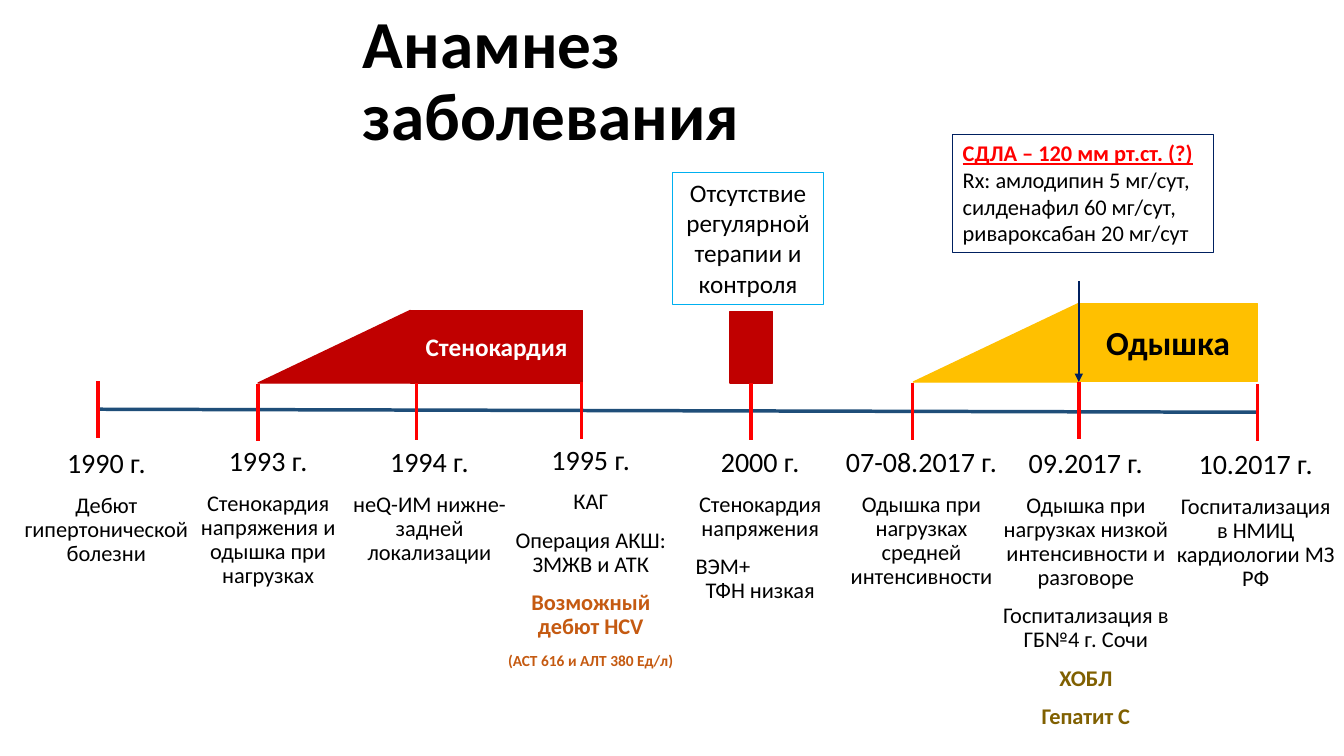
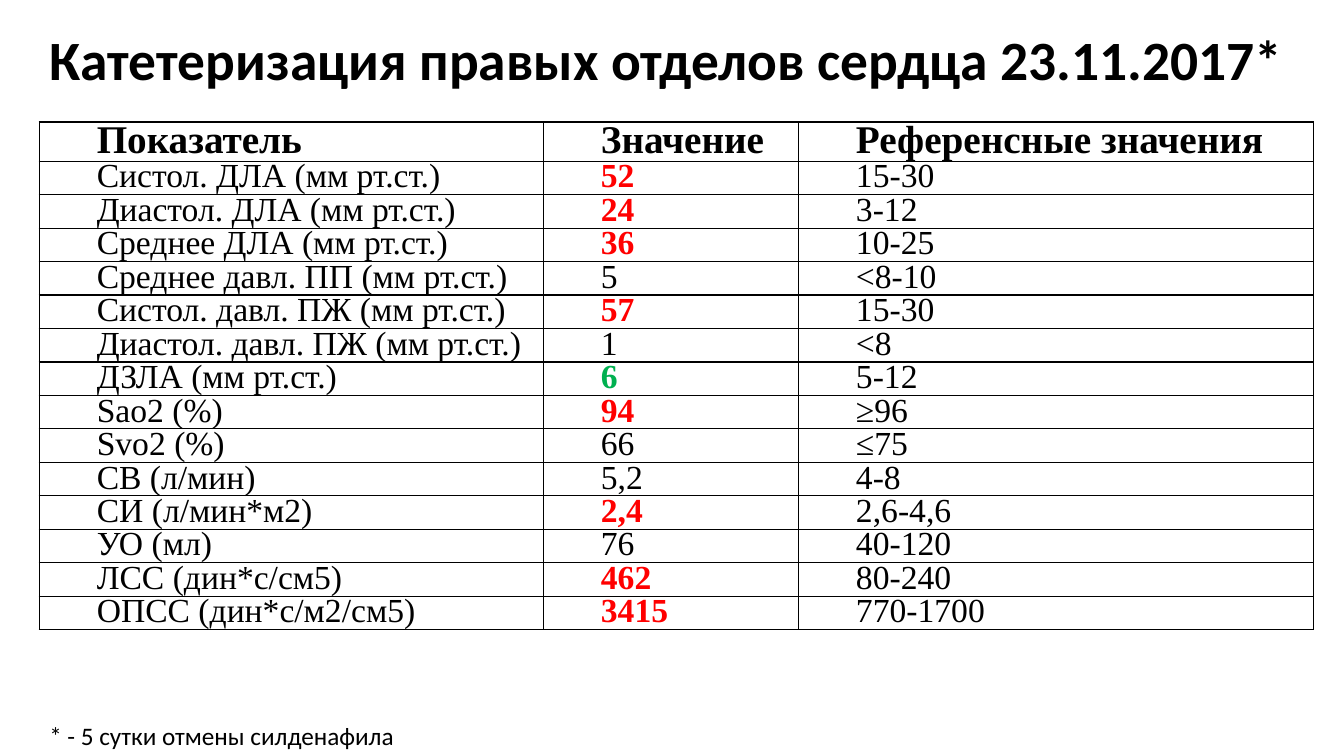
from lxml.etree import SubElement
from pptx import Presentation
from pptx.dml.color import RGBColor
from pptx.enum.shapes import MSO_CONNECTOR, MSO_SHAPE
from pptx.enum.text import MSO_ANCHOR, MSO_AUTO_SIZE, PP_ALIGN
from pptx.oxml.ns import qn
from pptx.util import Inches, Pt

BLACK = RGBColor(0x00, 0x00, 0x00)
WHITE = RGBColor(0xFF, 0xFF, 0xFF)
RED = RGBColor(0xFF, 0x00, 0x00)
DARK_RED = RGBColor(0xC0, 0x00, 0x00)
AMBER = RGBColor(0xFF, 0xC0, 0x00)
GREEN = RGBColor(0x00, 0xB0, 0x50)
ORANGE = RGBColor(0xC5, 0x5A, 0x11)
OLIVE = RGBColor(0x80, 0x60, 0x00)
STEEL = RGBColor(0x1F, 0x4E, 0x79)
NAVY = RGBColor(0x00, 0x20, 0x60)
SKY = RGBColor(0x00, 0xB0, 0xF0)

presentation = Presentation()
presentation.slide_width = Inches(13.33)
presentation.slide_height = Inches(7.5)


def write_paragraph(paragraph, text, size, color=BLACK, bold=False,
                    align=PP_ALIGN.LEFT, spacing=1.0, font_name="Calibri"):
    paragraph.text = text
    paragraph.alignment = align
    paragraph.line_spacing = spacing
    for run in paragraph.runs:
        run.font.name = font_name
        run.font.size = Pt(size)
        run.font.bold = bold
        run.font.color.rgb = color


def add_titled_slide(text, size, left, top, width, height):
    slide = presentation.slides.add_slide(presentation.slide_layouts[5])
    title = slide.shapes.title
    title.left, title.top = Inches(left), Inches(top)
    title.width, title.height = Inches(width), Inches(height)
    title.text_frame.word_wrap = True
    title.text_frame.auto_size = MSO_AUTO_SIZE.NONE
    title.text_frame.vertical_anchor = MSO_ANCHOR.MIDDLE
    write_paragraph(title.text_frame.paragraphs[0], text, size, bold=True, spacing=0.9)
    return slide


# Slide 1: timeline
slide = add_titled_slide("Анамнез заболевания", 48, 3.5, 0.28, 6.33, 1.08)

# Symptom blocks: kind, left, top, width, height, fill, label, label size, label colour
blocks = [
    (MSO_SHAPE.RIGHT_TRIANGLE, 9.06, 3.01, 1.64, 0.78, AMBER, "", 0, BLACK),
    (MSO_SHAPE.RECTANGLE, 10.7, 3.01, 1.77, 0.77, AMBER, "Одышка", 24, BLACK),
    (MSO_SHAPE.RIGHT_TRIANGLE, 2.56, 3.08, 1.51, 0.72, DARK_RED, "", 0, WHITE),
    (MSO_SHAPE.RECTANGLE, 4.07, 3.08, 1.71, 0.72, DARK_RED, "Стенокардия", 18, WHITE),
    (MSO_SHAPE.RECTANGLE, 7.24, 3.09, 0.42, 0.71, DARK_RED, "", 0, WHITE),
]
for kind, left, top, width, height, fill, label, size, color in blocks:
    block = slide.shapes.add_shape(
        kind, Inches(left), Inches(top), Inches(width), Inches(height))
    block.shadow.inherit = False
    block.fill.solid()
    block.fill.fore_color.rgb = fill
    block.line.color.rgb = fill
    block.line.width = Pt(1)
    if kind == MSO_SHAPE.RIGHT_TRIANGLE:
        block._element.spPr.find(qn("a:xfrm")).set("flipH", "1")
    if label:
        write_paragraph(block.text_frame.paragraphs[0], label, size, color, True,
                        PP_ALIGN.CENTER)
relapse_block = block

# Axis, ticks and arrow: start x, start y, end x, end y, colour, width
ticks = [(0.97, 3.78), (2.56, 3.81), (4.13, 3.8), (5.77, 3.79), (7.45, 3.8),
         (9.05, 3.8), (10.7, 3.79), (12.47, 3.81)]
lines = [(0.97, 4.06, 12.47, 4.09, STEEL, 2.5)]
lines += [(x, y, x, y + 0.57, RED, 2.5) for x, y in ticks]
lines += [(10.7, 2.79, 10.7, 3.79, NAVY, 1.5)]
for start_x, start_y, end_x, end_y, color, width in lines:
    connector = slide.shapes.add_connector(
        MSO_CONNECTOR.STRAIGHT, Inches(start_x), Inches(start_y),
        Inches(end_x), Inches(end_y))
    connector.line.color.rgb = color
    connector.line.width = Pt(width)
    properties = connector._element.spPr
    SubElement(properties, qn("a:effectLst"))
    if color == NAVY:
        SubElement(properties.find(qn("a:ln")), qn("a:tailEnd"), type="triangle")
    if start_x == 7.45:
        connector.begin_connect(relapse_block, 2)

# Events: left, top, width, height, date, notes as (text, size, colour)
events = [
    (0, 4.41, 2.11, 1.99, "1990 г.", [("Дебют гипертонической болезни", 16, BLACK)]),
    (1.86, 4.39, 1.6, 1.99, "1993 г.",
     [("Стенокардия напряжения и одышка при нагрузках", 16, BLACK)]),
    (3.39, 4.4, 1.74, 1.99, "1994 г.", [("неQ-ИМ нижне-задней локализации", 16, BLACK)]),
    (4.93, 4.38, 1.86, 2.87, "1995 г.",
     [("КАГ", 16, BLACK), ("Операция АКШ: ЗМЖВ и АТК", 16, BLACK),
      ("Возможный дебют HCV", 16, ORANGE), ("(АСТ 616 и АЛТ 380 Ед/л)", 11, ORANGE)]),
    (6.6, 4.4, 1.88, 2.74, "2000 г.",
     [("Стенокардия напряжения", 16, BLACK), ("ВЭМ+", 16, BLACK),
      ("ТФН низкая", 16, BLACK)]),
    (8.28, 4.4, 1.72, 1.99, "07-08.2017 г.",
     [("Одышка при нагрузках средней интенсивности", 16, BLACK)]),
    (9.83, 4.41, 1.88, 2.87, "09.2017 г.",
     [("Одышка при нагрузках низкой интенсивности и разговоре", 16, BLACK),
      ("Госпитализация в ГБ№4 г. Сочи", 16, BLACK),
      ("ХОБЛ", 16, OLIVE), ("Гепатит С", 16, OLIVE)]),
    (11.57, 4.42, 1.77, 1.99, "10.2017 г.",
     [("Госпитализация в НМИЦ кардиологии МЗ РФ", 16, BLACK)]),
]
for left, top, width, height, date, notes in events:
    event_box = slide.shapes.add_textbox(
        Inches(left), Inches(top), Inches(width), Inches(height))
    text_frame = event_box.text_frame
    text_frame.word_wrap = True
    for index, (text, size, color) in enumerate([(date, 20, BLACK)] + notes):
        paragraph = text_frame.add_paragraph() if index else text_frame.paragraphs[0]
        write_paragraph(paragraph, text, size, color, color != BLACK,
                        PP_ALIGN.CENTER, 0.9)
        paragraph.space_before = Pt(10)
        # The stress test and its result form one note on two lines
        if text == "ВЭМ+":
            paragraph.alignment = PP_ALIGN.LEFT
            paragraph._p.get_or_add_pPr().set("marL", str(Inches(0.2)))
        elif text == "ТФН низкая":
            paragraph.space_before = Pt(0)

# Framed callouts: left, top, width, height, frame, size, alignment, lines
callouts = [
    (9.45, 1.33, 2.59, 1.18, NAVY, 16, PP_ALIGN.LEFT,
     ["СДЛА – 120 мм рт.ст. (?)", "Rx: амлодипин 5 мг/сут,",
      "силденафил 60 мг/сут,", "ривароксабан 20 мг/сут"]),
    (6.67, 1.71, 1.5, 1.31, SKY, 18, PP_ALIGN.CENTER,
     ["Отсутствие", "регулярной", "терапии и", "контроля"]),
]
for left, top, width, height, frame, size, align, texts in callouts:
    callout = slide.shapes.add_textbox(
        Inches(left), Inches(top), Inches(width), Inches(height))
    callout.line.color.rgb = frame
    callout.line.width = Pt(0.75)
    text_frame = callout.text_frame
    text_frame.word_wrap = True
    for index, text in enumerate(texts):
        paragraph = text_frame.add_paragraph() if index else text_frame.paragraphs[0]
        is_alert = text.startswith("СДЛА")
        write_paragraph(paragraph, text, size, RED if is_alert else BLACK, is_alert, align)
        if is_alert:
            paragraph.runs[0].font.underline = True

# Slide 2: catheterisation results
slide = add_titled_slide("Катетеризация правых отделов сердца 23.11.2017*", 39.6,
                         0.39, 0.17, 12.64, 0.9)

# Rows: measure, value, reference range, value colour
results = [
    ("Показатель", "Значение", "Референсные значения", BLACK),
    ("Систол. ДЛА (мм рт.ст.)", "52", "15-30", RED),
    ("Диастол. ДЛА (мм рт.ст.)", "24", "3-12", RED),
    ("Среднее ДЛА (мм рт.ст.)", "36", "10-25", RED),
    ("Среднее давл. ПП (мм рт.ст.)", "5", "<8-10", BLACK),
    ("Систол. давл. ПЖ (мм рт.ст.)", "57", "15-30", RED),
    ("Диастол. давл. ПЖ (мм рт.ст.)", "1", "<8", BLACK),
    ("ДЗЛА (мм рт.ст.)", "6", "5-12", GREEN),
    ("Sao2 (%)", "94", "≥96", RED),
    ("Svo2 (%)", "66", "≤75", BLACK),
    ("СВ (л/мин)", "5,2", "4-8", BLACK),
    ("СИ (л/мин*м2)", "2,4", "2,6-4,6", RED),
    ("УО (мл)", "76", "40-120", BLACK),
    ("ЛСС (дин*с/см5)", "462", "80-240", RED),
    ("ОПСС (дин*с/м2/см5)", "3415", "770-1700", RED),
]
table = slide.shapes.add_table(len(results), 3, Inches(0.39), Inches(1.21),
                               Inches(12.64), Inches(5.01)).table
table.first_row = False
table.horz_banding = False
for column, width in zip(table.columns, (5, 2.53, 5.11)):
    column.width = Inches(width)
for row_index, (*texts, value_color) in enumerate(results):
    is_header = row_index == 0
    table.rows[row_index].height = Inches(0.39 if is_header else 0.33)
    for column_index, text in enumerate(texts):
        cell = table.cell(row_index, column_index)
        cell.margin_left = cell.margin_right = Inches(0.07)
        cell.margin_top = cell.margin_bottom = 0
        color = value_color if column_index == 1 else BLACK
        paragraph = cell.text_frame.paragraphs[0]
        write_paragraph(paragraph, text, 28 if is_header else 24, color,
                        is_header or color != BLACK, spacing=0.9,
                        font_name="Times New Roman")
        paragraph._p.get_or_add_pPr().set("marL", str(Inches(0.5)))
        cell_properties = cell._tc.get_or_add_tcPr()
        for side in ("a:lnL", "a:lnR", "a:lnT", "a:lnB"):
            border = SubElement(cell_properties, qn(side), w=str(Pt(1)))
            border_fill = SubElement(border, qn("a:solidFill"))
            SubElement(border_fill, qn("a:srgbClr"), val=str(BLACK))
        cell.fill.background()

# Footnote
footnote = slide.shapes.add_textbox(Inches(0.39), Inches(7.1), Inches(4.88), Inches(0.4))
footnote.text_frame.word_wrap = True
write_paragraph(footnote.text_frame.paragraphs[0], "* - 5 сутки отмены силденафила", 18)

presentation.save("out.pptx")
